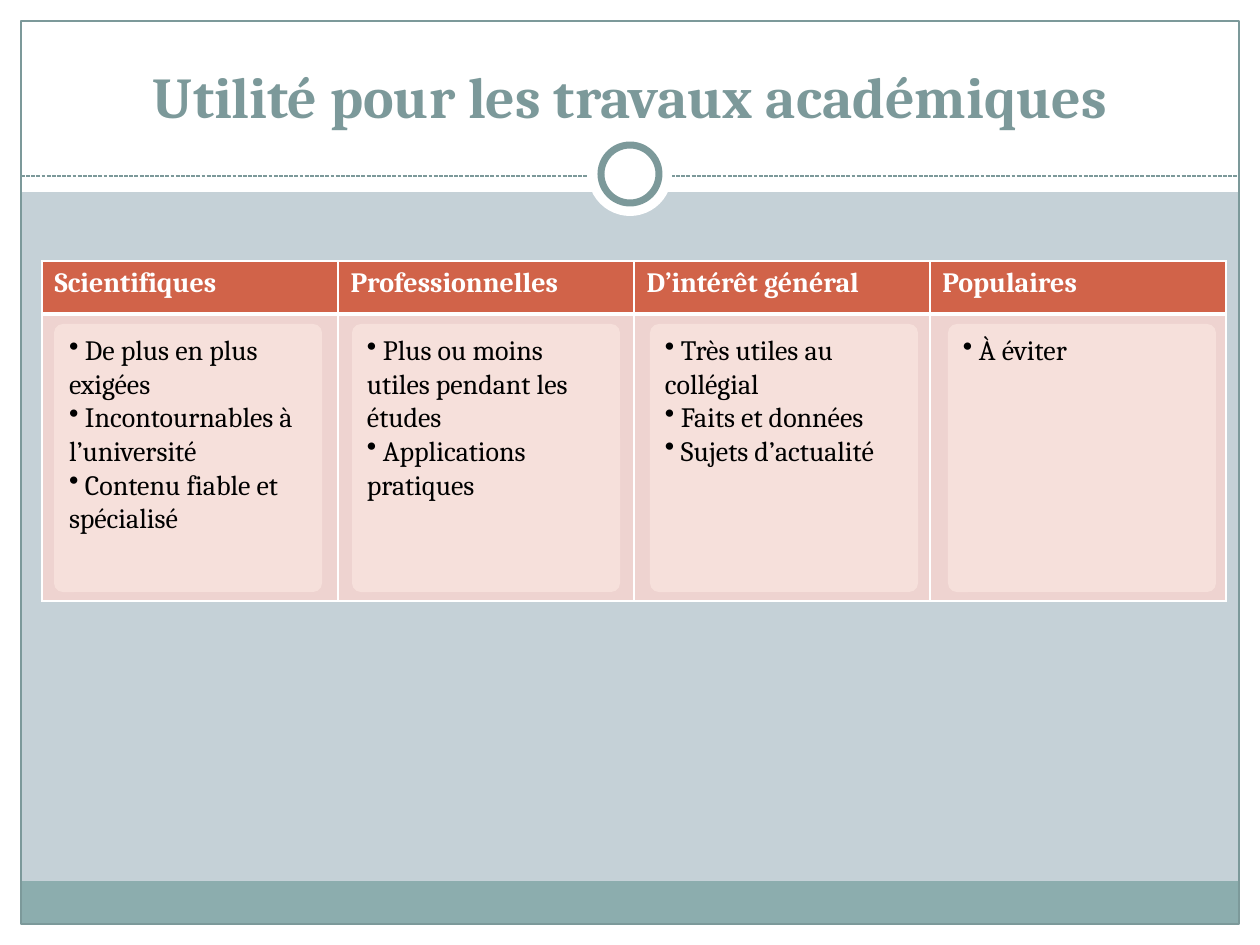
from lxml import etree
from pptx import Presentation
from pptx.dml.color import RGBColor
from pptx.enum.dml import MSO_LINE
from pptx.enum.shapes import MSO_CONNECTOR, MSO_SHAPE as SHAPE
from pptx.enum.text import MSO_ANCHOR as ANCHOR, PP_ALIGN as ALIGN
from pptx.oxml.ns import qn
from pptx.util import Emu, Pt

SCALE = 914400 / 126  # EMU per px
FONT = "Cambria"
C = {
    "back": "C5D1D7", "white": "FFFFFF", "black": "000000",
    "teal": "7C999A", "footer": "8CADAE",
    "header": "D16349", "body": "EED3D0", "card": "F6E0DB",
}
COLUMNS = [
    ("Scientifiques", ["De plus en plus exigées",
                       "Incontournables à l’université",
                       "Contenu fiable et spécialisé"]),
    ("Professionnelles", ["Plus ou moins utiles pendant les études",
                          "Applications pratiques"]),
    ("D’intérêt général", ["Très utiles au collégial",
                           "Faits et données",
                           "Sujets d’actualité"]),
    ("Populaires", ["À éviter"]),
]


def px(n):
    return Emu(round(n * SCALE))


def rgb(name):
    return RGBColor.from_string(C[name])


def add_run(p, text, size, color, bold=False):
    r = p.add_run()
    r.text = text
    r.font.name, r.font.size, r.font.bold = FONT, Pt(size), bold
    r.font.color.rgb = rgb(color)


def add_shape(s, kind, box, fill=None, line=None, width=0.75):
    sp = s.shapes.add_shape(kind, *map(px, box))
    sp.shadow.inherit = False
    if fill:
        sp.fill.solid()
        sp.fill.fore_color.rgb = rgb(fill)
    else:
        sp.fill.background()
    if line:
        sp.line.color.rgb = rgb(line)
        sp.line.width = Pt(width)
    else:
        sp.line.fill.background()
    return sp


def set_borders(cell, widths):
    """Draw white borders; widths are points for left, right, top, bottom."""
    tc_pr = cell._tc.get_or_add_tcPr()
    for i, (side, width) in enumerate(zip(("lnL", "lnR", "lnT", "lnB"), widths)):
        ln = etree.Element(qn(f"a:{side}"), w=str(Pt(width)))
        fill = etree.SubElement(ln, qn("a:solidFill"))
        etree.SubElement(fill, qn("a:srgbClr"), val=C["white"])
        tc_pr.insert(i, ln)


def add_bullet(p):
    p_pr = p._p.get_or_add_pPr()
    p_pr.set("marL", "0")
    p_pr.set("indent", "0")
    etree.SubElement(p_pr, qn("a:buChar"), char="•")


def draw_frame(s, x, y, w, h):
    """White margins, footer band, outline, dashed rule and ring."""
    m, head, band = 21, 192, 43
    for box in ((x, y + h - m, w, m), (x, y, w, head),
                (x, y, m, h), (x + w - m, y, m, h)):
        add_shape(s, SHAPE.RECTANGLE, box, "white")
    inner = w - 2 * m
    add_shape(s, SHAPE.RECTANGLE, (x + m, y + h - m - band, inner, band), "footer")
    add_shape(s, SHAPE.RECTANGLE, (x + m, y + m, inner, h - 2 * m), line="teal")

    # Dashed rule
    rule = y + 176
    ln = s.shapes.add_connector(MSO_CONNECTOR.STRAIGHT, px(x + m), px(rule),
                                px(x + w - m), px(rule))
    ln.line.color.rgb = rgb("teal")
    ln.line.width = Pt(0.75)
    ln.line.dash_style = MSO_LINE.SQUARE_DOT
    etree.SubElement(ln._element.spPr, qn("a:effectLst"))

    # Ring on its white disc
    cx, cy = x + w // 2, y + 174
    for d, line in ((84, None), (58, "teal")):
        add_shape(s, SHAPE.OVAL, (cx - d // 2, cy - d // 2, d, d), "white", line, 4)


def draw_title(s, x, y, w, h):
    tf = s.shapes.add_textbox(*map(px, (x, y, w, h))).text_frame
    tf.word_wrap = True
    tf.vertical_anchor = ANCHOR.BOTTOM
    p = tf.paragraphs[0]
    p.alignment = ALIGN.CENTER
    add_run(p, "Utilité pour les travaux académiques", 33, "teal", True)


def draw_table(s, x, y, w, h):
    head = 53
    table = s.shapes.add_table(2, len(COLUMNS), *map(px, (x, y, w, h))).table
    table.rows[0].height, table.rows[1].height = px(head), px(h - head)
    for i, (name, _) in enumerate(COLUMNS):
        table.columns[i].width = px(w // len(COLUMNS))
        add_run(table.cell(0, i).text_frame.paragraphs[0], name, 16, "white", True)
        for row, fill, widths in ((0, "header", (1, 1, 1, 3)),
                                  (1, "body", (1, 1, 3, 1))):
            cell = table.cell(row, i)
            cell.fill.solid()
            cell.fill.fore_color.rgb = rgb(fill)
            set_borders(cell, widths)


def draw_cards(s, x, y, w, h):
    size = h
    step = (w - size) / (len(COLUMNS) - 1)
    for i, (_, items) in enumerate(COLUMNS):
        sp = add_shape(s, SHAPE.ROUNDED_RECTANGLE,
                       (x + i * step, y, size, size), "card")
        sp.adjustments[0] = 0.033
        tf = sp.text_frame
        tf.word_wrap = True
        tf.vertical_anchor = ANCHOR.TOP
        for j, item in enumerate(items):
            p = tf.add_paragraph() if j else tf.paragraphs[0]
            p.alignment = ALIGN.LEFT
            add_bullet(p)
            add_run(p, " " + item, 16, "black")


def main():
    prs = Presentation()
    prs.slide_width, prs.slide_height = px(1260), px(945)
    s = prs.slides.add_slide(prs.slide_layouts[6])
    s.background.fill.solid()
    s.background.fill.fore_color.rgb = rgb("back")
    draw_frame(s, 0, 0, 1260, 945)
    draw_title(s, 42, 31, 1176, 105)
    draw_table(s, 42, 261, 1184, 340)
    draw_cards(s, 54, 324, 1162, 268)
    prs.save("out.pptx")


if __name__ == "__main__":
    main()
